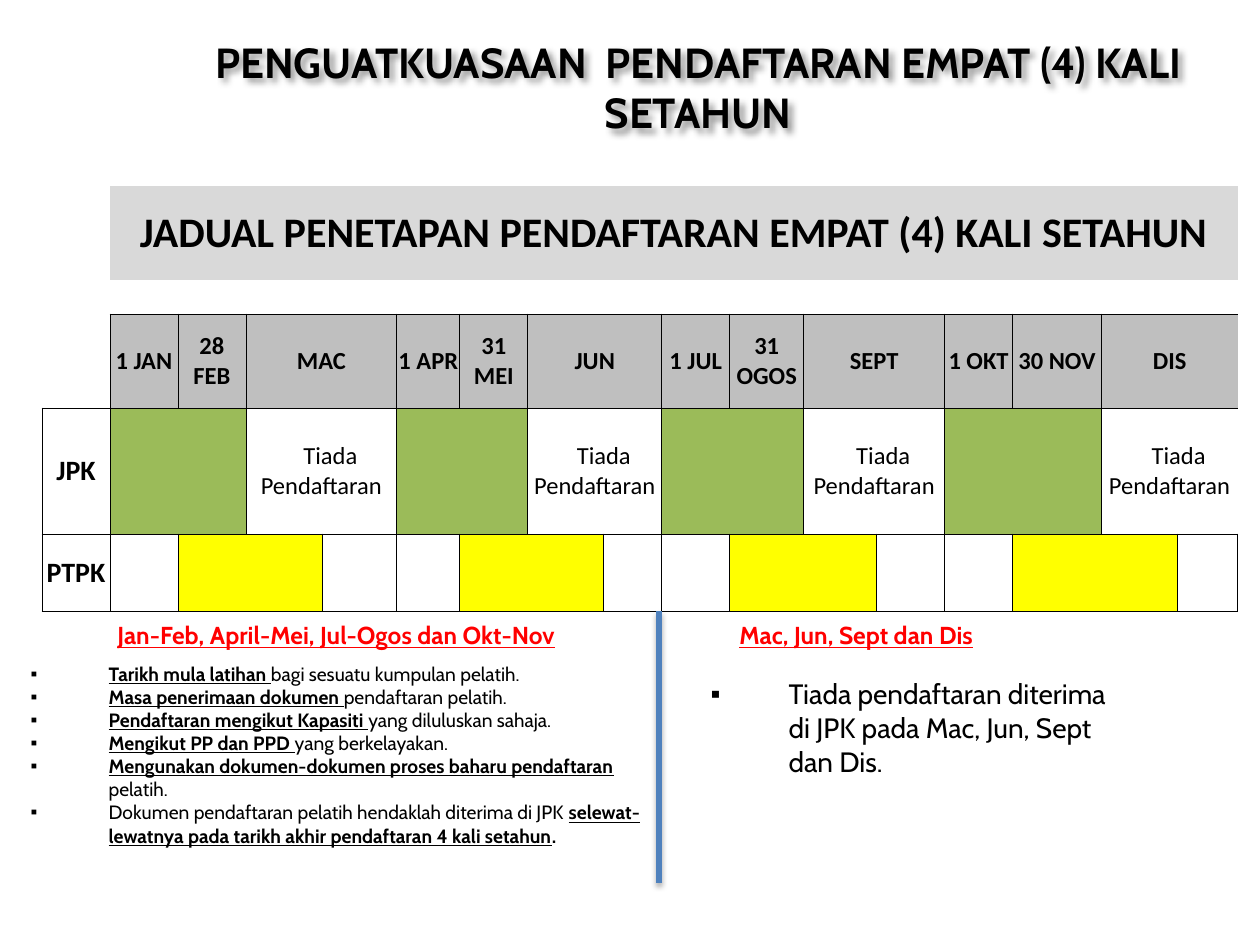
from dataclasses import dataclass
from itertools import accumulate

from lxml import etree
from pptx import Presentation
from pptx import util as u
from pptx.dml import color
from pptx.enum import shapes, text
from pptx.oxml import ns

EMU_PER_PX = 914400 / 126
COLORS = {
    "ink": "000000", "red": "FF0000", "rule": "4F81BD", "banner": "D9D9D9",
    "month": "BFBFBF", "jpk": "9BBB59", "ptpk": "FFFF00",
}
COLUMNS = [68, 68, 68, 77, 74, 63, 68, 76, 58, 68, 74, 73, 68, 68, 89, 76, 60]
ROWS = [94, 34, 94, 126, 77]
QUARTERS = [
    ("1 JAN", "28 FEB", "MAC"), ("1 APR", "31 MEI", "JUN"),
    ("1 JUL", "31 OGOS", "SEPT"), ("1 OKT", "30 NOV", "DIS"),
]


@dataclass(frozen=True)
class Box:
    left: int
    top: int
    width: int
    height: int

    def emu(self) -> list[int]:
        return [px(n) for n in (self.left, self.top, self.width, self.height)]


@dataclass(frozen=True)
class Span:
    words: str
    bold: bool = False
    underline: bool = False


@dataclass(frozen=True)
class Cell:
    row: int
    col: int
    words: str = ""
    span: int = 1
    fill: str = ""
    size: int = 14
    bold: bool = True
    indent: int = 0
    sides: str = "LRTB"


@dataclass(frozen=True)
class Bullets:
    box: Box
    size: int
    top_inset: int
    items: list[list[Span]]


@dataclass(frozen=True)
class Heading:
    box: Box
    words: str


def px(length: int) -> int:
    return u.Emu(round(length * EMU_PER_PX))


def add(parent, tag: str, **attrs):
    return etree.SubElement(parent, ns.qn(tag), **attrs)


def write(para, words, *, size, font="Cabin", ink="ink", bold=False, underline=False):
    span = para.add_run()
    span.text = words
    span.font.size = u.Pt(size)
    span.font.name = font
    span.font.bold = bold
    span.font.underline = underline
    span.font.color.rgb = color.RGBColor.from_string(COLORS[ink])


def move(shape, box: Box):
    shape.left, shape.top, shape.width, shape.height = box.emu()


def add_shadow(shape, blur: float, distance: float, angle: int, opacity: int):
    effects = add(shape._element.spPr, "a:effectLst")
    shadow = add(effects, "a:outerShdw", blurRad=str(u.Pt(blur)), dist=str(u.Pt(distance)),
                 dir=str(angle * 60000), algn="tl", rotWithShape="0")
    shade = add(shadow, "a:srgbClr", val=COLORS["ink"])
    add(shade, "a:alpha", val=str(opacity * 1000))


def draw_borders(cell, sides: str):
    props = cell._tc.get_or_add_tcPr()
    for side in "LRTB":
        line = add(props, f"a:ln{side}", w=str(u.Pt(0.5)))
        if side in sides:
            add(add(line, "a:solidFill"), "a:srgbClr", val=COLORS["ink"])
        else:
            add(line, "a:noFill")


def draw_cell(table, item: Cell):
    last = item.col + item.span - 1
    for col in range(item.col, last + 1):
        hidden = ("L" if col > item.col else "") + ("R" if col < last else "")
        cell = table.cell(item.row, col)
        draw_borders(cell, "".join(s for s in item.sides if s not in hidden))
        cell.margin_left = cell.margin_right = cell.margin_top = px(1)
        cell.margin_bottom = 0
        cell.vertical_anchor = text.MSO_ANCHOR.MIDDLE
        if item.fill:
            cell.fill.solid()
            cell.fill.fore_color.rgb = color.RGBColor.from_string(COLORS[item.fill])
        else:
            cell.fill.background()
        if col > item.col or not item.words:
            add(cell.text_frame.paragraphs[0]._p, "a:endParaRPr", sz="1000")
    cell = table.cell(item.row, item.col)
    if item.span > 1:
        cell.merge(table.cell(item.row, last))
    if item.words:
        para = cell.text_frame.paragraphs[0]
        para.alignment = text.PP_ALIGN.CENTER
        if item.indent:
            para._p.get_or_add_pPr().set("indent", str(px(item.indent)))
        write(para, item.words, size=item.size, font="Calibri", bold=item.bold)


def schedule_cells() -> list[Cell]:
    cells = [
        Cell(0, 0, sides=""),
        Cell(0, 1, "JADUAL PENETAPAN PENDAFTARAN EMPAT (4) KALI SETAHUN",
             span=16, fill="banner", size=24, sides=""),
        Cell(1, 0, sides=""),
        Cell(2, 0, sides="RB"),
        Cell(3, 0, "JPK", size=16),
        Cell(4, 0, "PTPK", size=16),
    ]
    cells += [Cell(1, col, sides="B") for col in range(1, len(COLUMNS))]
    for index, (start, end, closed) in enumerate(QUARTERS):
        col = 1 + 4 * index
        cells += [
            Cell(2, col, start, fill="month"),
            Cell(2, col + 1, end, fill="month"),
            Cell(2, col + 2, closed, span=2, fill="month"),
            Cell(3, col, span=2, fill="jpk"),
            Cell(3, col + 2, "Tiada Pendaftaran", span=2, bold=False, indent=18),
            Cell(4, col),
            Cell(4, col + 1, span=2, fill="ptpk"),
            Cell(4, col + 3),
        ]
    return cells


def draw_schedule(page):
    box = Box(42, 186, sum(COLUMNS), sum(ROWS))
    table = page.shapes.add_table(len(ROWS), len(COLUMNS), *box.emu()).table
    table.first_row = table.horz_banding = False
    edges = [0, *accumulate(COLUMNS)]
    for column, left, right in zip(table.columns, edges, edges[1:]):
        column.width = px(right) - px(left)
    for row, height in zip(table.rows, ROWS):
        row.height = px(height)
    for item in schedule_cells():
        draw_cell(table, item)


def draw_title(title):
    move(title, Box(186, 30, 1024, 115))
    title.text_frame.vertical_anchor = text.MSO_ANCHOR.TOP
    title.text_frame.auto_size = text.MSO_AUTO_SIZE.NONE
    para = title.text_frame.paragraphs[0]
    para.alignment = text.PP_ALIGN.CENTER
    write(para, "PENGUATKUASAAN  PENDAFTARAN EMPAT (4) KALI SETAHUN", size=24, bold=True)
    add_shadow(title, 4, 3, 45, 40)


def draw_bullets(body, bullets: Bullets):
    move(body, bullets.box)
    frame = body.text_frame
    frame.auto_size = text.MSO_AUTO_SIZE.NONE
    frame.vertical_anchor = text.MSO_ANCHOR.TOP
    frame.margin_top = px(bullets.top_inset)
    for index, spans in enumerate(bullets.items):
        para = frame.add_paragraph() if index else frame.paragraphs[0]
        para.space_before = u.Pt(0)
        props = para._p.get_or_add_pPr()
        props.set("marL", str(px(78)))
        props.set("indent", str(-px(78)))
        add(props, "a:buFont", typeface="Arial")
        add(props, "a:buChar", char="▪")
        for span in spans:
            write(para, span.words, size=bullets.size, bold=span.bold, underline=span.underline)


def draw_heading(page, heading: Heading):
    frame = page.shapes.add_textbox(*heading.box.emu()).text_frame
    frame.word_wrap = False
    frame.auto_size = text.MSO_AUTO_SIZE.SHAPE_TO_FIT_TEXT
    write(frame.paragraphs[0], heading.words, size=14, ink="red", bold=True, underline=True)


def draw_divider(page):
    line = page.shapes.add_connector(
        shapes.MSO_CONNECTOR.STRAIGHT, px(659), px(611), px(659), px(883))
    line.line.width = u.Pt(3)
    line.line.color.rgb = color.RGBColor.from_string(COLORS["rule"])
    add_shadow(line, 3.1, 1.8, 90, 35)


def key(words: str) -> Span:
    return Span(words, bold=True, underline=True)


RULES = Bullets(Box(18, 656, 639, 270), 11, 6, [
    [key("Tarikh mula latihan "), Span("bagi sesuatu kumpulan pelatih.")],
    [key("Masa penerimaan dokumen "), Span("pendaftaran pelatih.")],
    [key("Pendaftaran mengikut Kapasiti "), Span("yang diluluskan sahaja.")],
    [key("Mengikut PP dan PPD "), Span("yang berkelayakan.")],
    [key("Mengunakan dokumen-dokumen proses baharu pendaftaran "), Span("pelatih.")],
    [Span("Dokumen pendaftaran pelatih hendaklah diterima di JPK "),
     key("selewat-lewatnya pada tarikh akhir pendaftaran 4 kali setahun"),
     Span(".", bold=True)],
])
CLOSED = Bullets(Box(698, 601, 444, 277), 16, 76, [
    [Span("Tiada pendaftaran diterima di JPK pada Mac, Jun, Sept dan Dis.")],
])
HEADINGS = [
    Heading(Box(105, 614, 540, 43), "Jan-Feb, April-Mei, Jul-Ogos dan Okt-Nov"),
    Heading(Box(727, 614, 306, 43), "Mac, Jun, Sept dan Dis"),
]


def main():
    deck = Presentation()
    deck.slide_width, deck.slide_height = px(1260), px(945)
    page = deck.slides.add_slide(deck.slide_layouts.get_by_name("Two Content"))
    draw_title(page.shapes.title)
    draw_schedule(page)
    for slot, bullets in enumerate((RULES, CLOSED), start=1):
        draw_bullets(page.placeholders[slot], bullets)
    for heading in HEADINGS:
        draw_heading(page, heading)
    draw_divider(page)
    for shape in list(page.placeholders):
        if not shape.text_frame.text:
            shape._element.getparent().remove(shape._element)
    deck.save("out.pptx")


if __name__ == "__main__":
    main()
